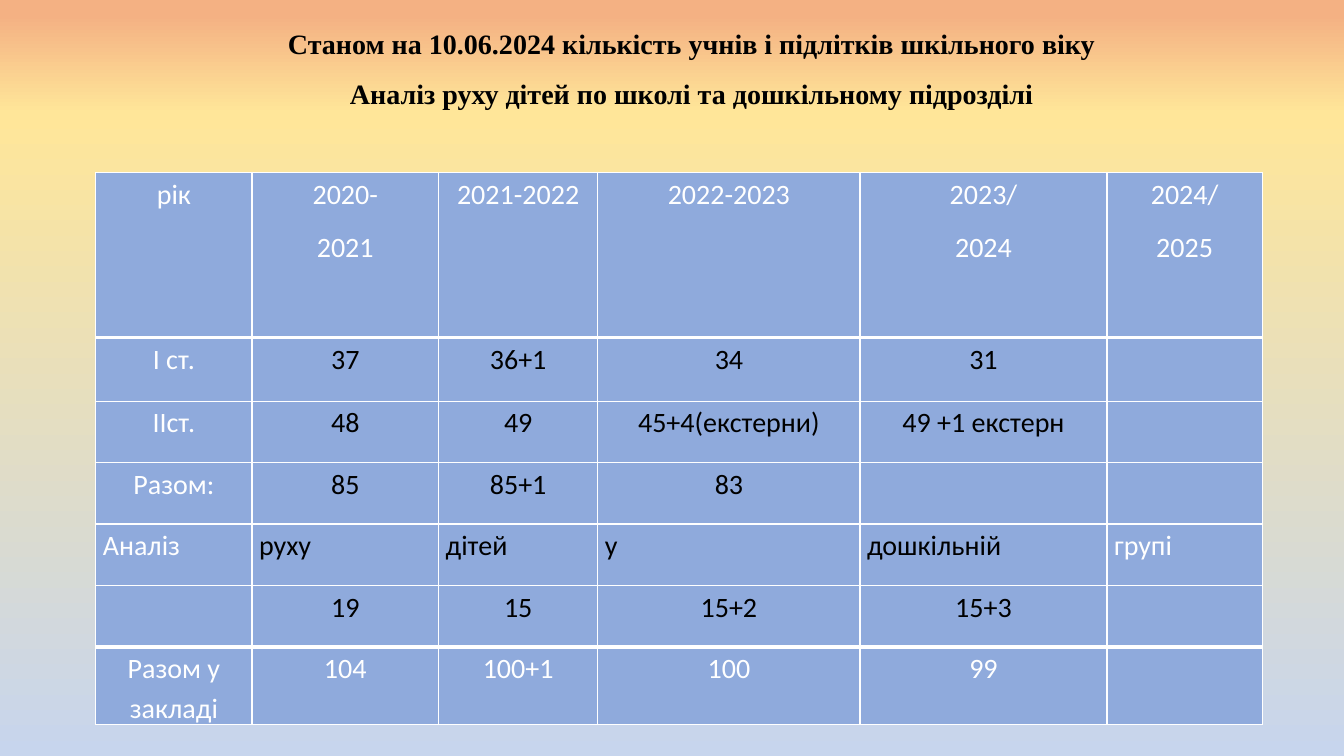
"""Build the slide on pupil numbers by school year."""
from copy import deepcopy

from lxml.etree import SubElement
from pptx import Presentation
from pptx.dml.color import RGBColor as Rgb
from pptx.enum.text import PP_ALIGN as Align
from pptx.oxml.ns import qn
from pptx.util import Inches, Pt

COLORS = {"peach": "F4B183", "sand": "FFE699", "mist": "C7D5ED",
          "cell": "8FAADC", "light": "FFFFFF", "dark": "000000"}
TITLE = [("Станом на 10.06.2024 кількість учнів і підлітків шкільного віку", 1.07, 8),
         ("Аналіз руху дітей по школі та дошкільному підрозділі", 1.15, 10)]
COLUMNS = [1.55, 1.85, 1.58, 2.6, 2.45, 1.54]
ROWS = [1.64, 0.63, 0.61, 0.61, 0.61, 0.61, 0.71]
COUNTS = [
    ["рік", "2020-\n2021", "2021-2022", "2022-2023", "2023/\n2024", "2024/\n2025"],
    ["І ст.", "37", "36+1", "34", "31", ""],
    ["ІІст.", "48", "49", "45+4(екстерни)", "49 +1 екстерн", ""],
    ["Разом:", "85", "85+1", "83", "", ""],
    ["Аналіз", "руху", "дітей", "у", "дошкільній", "групі"],
    ["", "19", "15", "15+2", "15+3", ""],
    ["Разом у закладі", "104", "100+1", "100", "99", ""],
]
LAST_ROW, LAST_COLUMN = len(ROWS) - 1, len(COLUMNS) - 1
PRESCHOOL_ROW = 4
THICK_EDGES = (1, LAST_ROW)


def style(paragraph, font_name, color, spacing, after, align):
    paragraph.alignment = align
    paragraph.line_spacing = spacing
    paragraph.space_after = Pt(after)
    paragraph.font.name = font_name
    paragraph.font.size = Pt(20)
    paragraph.font.color.rgb = Rgb.from_string(COLORS[color])


def add_border(cell, side, width):
    line = SubElement(cell._tc.get_or_add_tcPr(), qn(f"a:ln{side}"), w=str(Pt(width)))
    SubElement(SubElement(line, qn("a:solidFill")), qn("a:srgbClr"), val=COLORS["light"])


prs = Presentation()
prs.slide_width, prs.slide_height = Inches(13.33), Inches(7.5)
slide = prs.slides.add_slide(prs.slide_layouts[6])

sky = slide.background.fill
sky.gradient()
sky.gradient_angle = 270
stops = slide.element.find(".//" + qn("a:gsLst"))
stops.append(deepcopy(stops[-1]))
for stop, (position, color) in zip(sky.gradient_stops,
                                   [(0.02, "peach"), (0.15, "sand"), (1, "mist")]):
    stop.position = position
    stop.color.rgb = Rgb.from_string(COLORS[color])

title = slide.shapes.add_textbox(Inches(0.53), Inches(0.19), Inches(12.52), Inches(1.43)).text_frame
title.word_wrap = True
title.margin_left = Inches(0.24)
title.text = "\n".join(text for text, _, _ in TITLE)
for paragraph, (_, spacing, after) in zip(title.paragraphs, TITLE):
    style(paragraph, "Times New Roman", "dark", spacing, after, Align.CENTER)
    paragraph.font.bold = True

pupils = slide.shapes.add_table(len(ROWS), len(COLUMNS), Inches(0.95), Inches(1.71),
                                Inches(sum(COLUMNS)), Inches(sum(ROWS))).table
pupils.first_row = pupils.horz_banding = False
for column, width in zip(pupils.columns, COLUMNS):
    column.width = Inches(width)
for row, height in zip(pupils.rows, ROWS):
    row.height = Inches(height)

for r, counts in enumerate(COUNTS):
    for c, count in enumerate(counts):
        cell = pupils.cell(r, c)
        for side, edge in (("L", None), ("R", None), ("T", r), ("B", r + 1)):
            add_border(cell, side, 3 if edge in THICK_EDGES else 1)
        cell.fill.solid()
        cell.fill.fore_color.rgb = Rgb.from_string(COLORS["cell"])
        cell.margin_left = cell.margin_right = Inches(0.07)
        cell.margin_top = cell.margin_bottom = 0
        cell.text = count
        color = "light" if r in (0, LAST_ROW) or c in (0, LAST_COLUMN) else "dark"
        align = Align.LEFT if r == PRESCHOOL_ROW else Align.CENTER
        for paragraph in cell.text_frame.paragraphs:
            style(paragraph, "Calibri", color, 1.15, 10, align)

prs.save("out.pptx")
